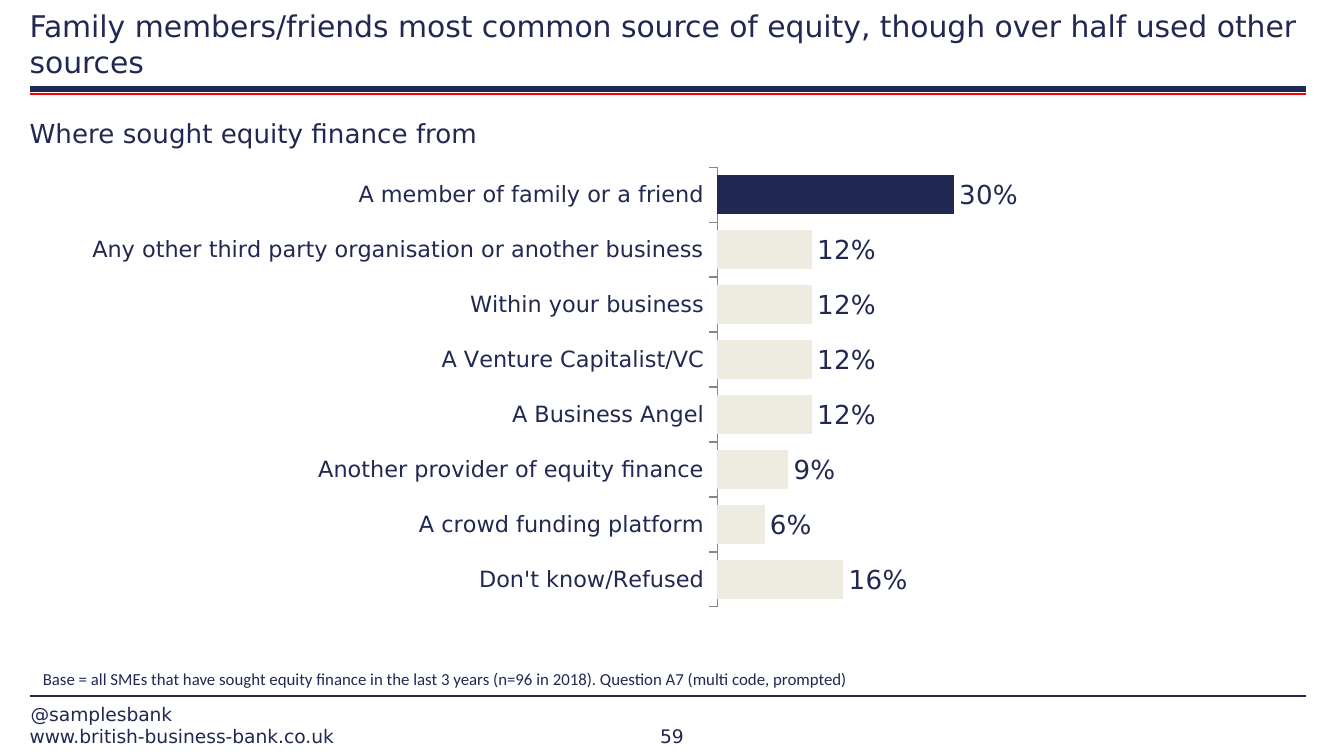
from lxml import etree
from pptx import Presentation, util as u
from pptx.chart import data as cd
from pptx.dml.color import RGBColor
from pptx.enum import chart as ce, shapes, text
from pptx.oxml import ns

COLORS = {"navy": "212952", "red": "FF0000", "cream": "EEECE1", "axis": "868686"}
SANS = "DejaVu Sans"


def rgb(name):
    return RGBColor.from_string(COLORS[name])


def write(sp, box, content, size, font=SANS, align=text.PP_ALIGN.LEFT,
          anchor=text.MSO_ANCHOR.BOTTOM, inset=0):
    sp.left, sp.top, sp.width, sp.height = [u.Cm(v) for v in box]
    tf = sp.text_frame
    tf.text = content
    tf.word_wrap = True
    tf.auto_size = text.MSO_AUTO_SIZE.NONE
    tf.vertical_anchor = anchor
    tf.margin_left = tf.margin_right = u.Cm(inset)
    tf.margin_top = tf.margin_bottom = u.Cm(inset / 2)
    p = tf.paragraphs[0]
    p.alignment = align
    p.space_before = u.Pt(0)
    f = p.runs[0].font
    f.size, f.name, f.color.rgb = u.Pt(size), font, rgb("navy")
    return p


prs = Presentation()
prs.slide_width, prs.slide_height = u.Cm(25.4), u.Cm(14.29)
s = prs.slides.add_slide(prs.slide_layouts[1])
left, width = 0.56, 24.13

write(s.shapes.title, (left, -0.41, width, 1.91),
      "Family members/friends most common source of equity, "
      "though over half used other sources", 16)

p = write(s.placeholders[1], (left, 2.21, width, 9.98),
          "Where sought equity finance from", 14, anchor=text.MSO_ANCHOR.TOP)
pPr = p._p.get_or_add_pPr()
pPr.set("marL", "0")
pPr.set("indent", "0")
etree.SubElement(pPr, ns.qn("a:buNone"))

for y, color, weight in [(1.68, "navy", 3), (1.78, "red", 1), (13.16, "navy", 1)]:
    ln = s.shapes.add_connector(shapes.MSO_CONNECTOR.STRAIGHT, u.Cm(left), u.Cm(y),
                                u.Cm(left + width), u.Cm(y))
    ln.line.color.rgb = rgb(color)
    ln.line.width = u.Pt(weight)
    etree.SubElement(ln._element.spPr, ns.qn("a:effectLst"))

data = cd.CategoryChartData()
sources = [
    ("A member of family or a friend", 30),
    ("Any other third party organisation or another business", 12),
    ("Within your business", 12),
    ("A Venture Capitalist/VC", 12),
    ("A Business Angel", 12),
    ("Another provider of equity finance", 9),
    ("A crowd funding platform", 6),
    ("Don't know/Refused", 16),
]
data.categories = [name for name, share in sources]
data.add_series("Series 1", [share for name, share in sources])
ch = s.shapes.add_chart(ce.XL_CHART_TYPE.BAR_CLUSTERED, u.Cm(-2.34), u.Cm(3.15),
                        u.Cm(24.84), u.Cm(8.76), data).chart
ch.has_legend = ch.has_title = False
ch.font.size, ch.font.name, ch.font.color.rgb = u.Pt(18), "Calibri", rgb("navy")

cat = ch.category_axis
cat.reverse_order = True
cat.has_major_gridlines = False
cat.major_tick_mark = ce.XL_TICK_MARK.OUTSIDE
cat.format.line.color.rgb = rgb("axis")
val = ch.value_axis
val.minimum_scale, val.maximum_scale = 0, 60
val.has_major_gridlines = False
val.visible = False

plot = ch.plots[0]
plot.gap_width = 40
plot.vary_by_categories = False
ser = plot.series[0]
ser.format.fill.solid()
ser.format.fill.fore_color.rgb = rgb("cream")
pt = ser.points[0].format.fill
pt.solid()
pt.fore_color.rgb = rgb("navy")
dl = ser.data_labels
dl.show_value = True
dl.number_format, dl.number_format_is_linked = r"0\%", False
dl.position = ce.XL_LABEL_POSITION.OUTSIDE_END
for f, size in [(cat.tick_labels.font, 12), (dl.font, 14)]:
    f.size, f.name, f.color.rgb = u.Pt(size), SANS, rgb("navy")

area = ch._chartSpace.chart.plotArea
for old in area.findall(ns.qn("c:layout")):
    area.remove(old)
layout = etree.Element(ns.qn("c:layout"))
area.insert(0, layout)
manual = etree.SubElement(layout, ns.qn("c:manualLayout"))
for tag, value in [("layoutTarget", "inner"), ("xMode", "edge"), ("yMode", "edge"),
                   ("x", "0.64"), ("y", "0"), ("w", "0.36"), ("h", "0.95")]:
    etree.SubElement(manual, ns.qn("c:" + tag)).set("val", value)

L, C = text.PP_ALIGN.LEFT, text.PP_ALIGN.CENTER
for box, content, size, font, align, inset in [
    ((left, 12.5, 23.67, 0.64),
     "Base = all SMEs that have sought equity finance in the last 3 years "
     "(n=96 in 2018). Question A7 (multi code, prompted)", 9, "Calibri", L, 0.25),
    ((0.58, 13.28, 8.08, 0.43), "@samplesbank", 10, SANS, L, 0),
    ((left, 13.69, 8.1, 0.43), "www.british-business-bank.co.uk", 10, SANS, L, 0),
    ((11.2, 13.69, 3, 0.43), "59", 10, SANS, C, 0),
]:
    write(s.shapes.add_textbox(0, 0, 0, 0), box, content, size, font, align, inset=inset)

prs.save("out.pptx")
